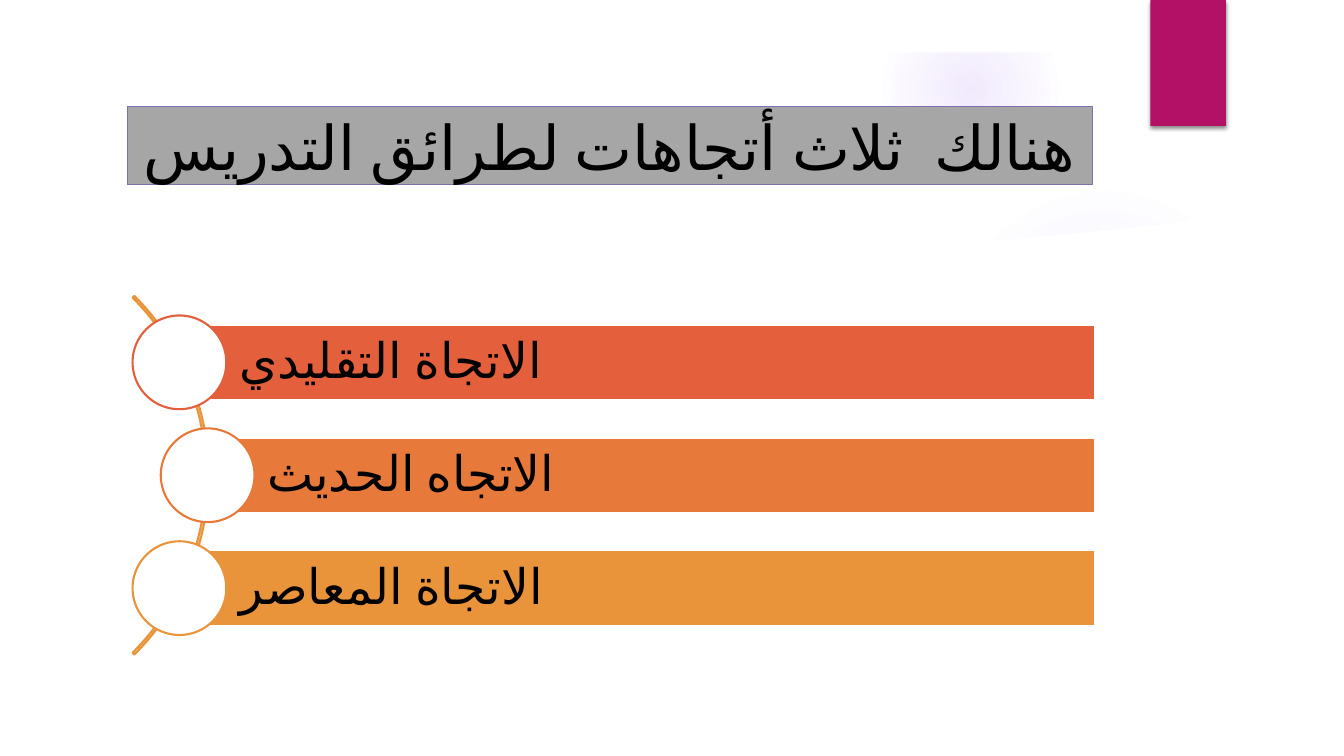
"""Build a slide on three trends in teaching methods."""
from lxml.etree import SubElement
from pptx import Presentation
from pptx.dml.color import RGBColor
from pptx.enum.lang import MSO_LANGUAGE_ID
from pptx.enum.shapes import MSO_SHAPE
from pptx.enum.text import MSO_ANCHOR, MSO_AUTO_SIZE, PP_ALIGN
from pptx.oxml import parse_xml
from pptx.oxml.ns import nsdecls, qn
from pptx.util import Inches, Pt

BLACK = RGBColor(0x00, 0x00, 0x00)
WHITE = RGBColor(0xFF, 0xFF, 0xFF)
GREY = RGBColor(0xA6, 0xA6, 0xA6)
PURPLE = RGBColor(0x80, 0x6E, 0xB1)
LILAC = RGBColor(0x9B, 0x6B, 0xF2)
PINK = RGBColor(0xB3, 0x11, 0x66)
RED = RGBColor(0xE4, 0x5F, 0x3C)
ORANGE = RGBColor(0xE7, 0x79, 0x3B)
AMBER = RGBColor(0xE9, 0x94, 0x3A)

WIDE, HIGH = 13.33, 7.5
GLOWS = [
    (9.41, 1.83, 3.08, [(0, 7), (36, 6), (69, 0)]),
    (8.75, 0.01, 1.75, [(0, 14), (36, 7), (73, 0)]),
]
VEIL = [(9.34, 2.5), (10.6, 2.43), (11.8, 2.3), (12.89, 2.14), (12.83, 1.66),
        (12.25, 1.85), (11.67, 2), (11.09, 2.14), (10.42, 2.27), (9.3, 2.43)]
SHEET = [(0.5, 2.04), (0.5, 7), (12.84, 7), (12.84, 2.04), (12, 2.17),
         (11.16, 2.27), (10.32, 2.35), (9.49, 2.41), (8.4, 2.46), (7.08, 2.48),
         (5.83, 2.46), (4.44, 2.41), (2.83, 2.3), (1.35, 2.15)]
EDGE = [(0, 0), (0, HIGH), (WIDE, HIGH), (WIDE, 0)]
HOLE = [(12.81, 6.98), (0.52, 6.98), (0.52, 0.52), (12.81, 0.52)]
TRENDS = [
    ("الاتجاة التقليدي", RED, 1.78),
    ("الاتجاه الحديث", ORANGE, 2.06),
    ("الاتجاة المعاصر", AMBER, 1.78),
]


def write(shape, text, size, align=PP_ALIGN.LEFT, left=0.1, side=0.1, lead=1.0):
    """Put one formatted paragraph in a shape."""
    frame = shape.text_frame
    frame.word_wrap = True
    frame.auto_size = MSO_AUTO_SIZE.NONE
    frame.vertical_anchor = MSO_ANCHOR.MIDDLE
    frame.margin_left = Inches(left)
    frame.margin_right = Inches(0.1)
    frame.margin_top = frame.margin_bottom = Inches(side)
    para = frame.paragraphs[0]
    para.alignment = align
    para.line_spacing = lead
    run = para.add_run()
    run.text = text
    run.font.size = Pt(size)
    run.font.name = Slide.FONT
    run.font.language_id = MSO_LANGUAGE_ID.ARABIC
    run.font.color.rgb = BLACK
    SubElement(run.font._element, qn("a:cs"), typeface=Slide.FONT)


class Slide:
    """Hold the style and the current slide."""

    FONT = "League Spartan"

    def __init__(self, deck):
        """Add a title-only slide to the deck."""
        self.page = deck.slides.add_slide(deck.slide_layouts[5])
        self.shapes = self.page.shapes

    def paint(self, shape, fill=None, line=None, width=1.5):
        """Set fill and line and drop the shadow."""
        shape.shadow.inherit = False
        if fill is None:
            shape.fill.background()
        else:
            shape.fill.solid()
            shape.fill.fore_color.rgb = fill
        if line is None:
            shape.line.fill.background()
        else:
            shape.line.color.rgb = line
            shape.line.width = Pt(width)
        return shape

    def shape(self, kind, left, top, width, height, **look):
        """Add a painted preset shape."""
        box = [Inches(n) for n in (left, top, width, height)]
        return self.paint(self.shapes.add_shape(kind, *box), **look)

    def glow(self, left, top, size, stops):
        """Add a disc that fades outward."""
        disc = self.shape(MSO_SHAPE.OVAL, left, top, size, size)
        marks = "".join(
            f'<a:gs pos="{pos * 1000}"><a:srgbClr val="{LILAC}">'
            f'<a:alpha val="{alpha * 1000}"/></a:srgbClr></a:gs>'
            for pos, alpha in stops)
        fade = parse_xml(
            f'<a:gradFill {nsdecls("a")}><a:gsLst>{marks}</a:gsLst>'
            '<a:path path="circle"><a:fillToRect l="50000" t="50000" '
            'r="50000" b="50000"/></a:path></a:gradFill>')
        props = disc._element.spPr
        props.replace(props.find(qn("a:noFill")), fade)

    def patch(self, *rings, alpha=100):
        """Add a white outline made of one or more rings."""
        first, *rest = [[(Inches(x), Inches(y)) for x, y in ring] for ring in rings]
        pen = self.shapes.build_freeform(*first[0])
        pen.add_line_segments(first[1:], close=True)
        for ring in rest:
            pen.move_to(*ring[0])
            pen.add_line_segments(ring[1:], close=True)
        form = self.paint(pen.convert_to_shape(), fill=WHITE)
        if alpha < 100:
            tint = form._element.spPr.find(qn("a:solidFill"))[0]
            SubElement(tint, qn("a:alpha"), val=str(alpha * 1000))

    def tab(self):
        """Add the top tab with its soft shadow."""
        tab = self.shape(MSO_SHAPE.RECTANGLE, 11.41, 0, 0.75, 1.25, fill=PINK)
        soft = tab._element.spPr.find(qn("a:effectLst"))
        cast = SubElement(soft, qn("a:outerShdw"), blurRad=str(Pt(3)),
                          dist=str(Pt(2)), dir="5400000", rotWithShape="0")
        tint = SubElement(cast, qn("a:srgbClr"), val=str(BLACK))
        SubElement(tint, qn("a:alpha"), val="45000")

    def title(self, text):
        """Place and format the title above the backdrop."""
        head = self.shapes.title
        self.shapes._spTree.append(head._element)
        head.left, head.top = Inches(1.26), Inches(1.06)
        head.width, head.height = Inches(9.58), Inches(0.77)
        head.fill.solid()
        head.fill.fore_color.rgb = GREY
        head.line.color.rgb = PURPLE
        head.line.width = Pt(0.75)
        write(head, text, 44, align=PP_ALIGN.CENTER, side=0.05)

    def arc(self):
        """Add the curve that links the discs."""
        arc = self.shape(MSO_SHAPE.BLOCK_ARC, -2.96, 2.2, 5.03, 5.03, line=AMBER)
        for i, turn in enumerate((189, 27, 0.005)):
            arc.adjustments[i] = turn

    def trend(self, text, color, left, top):
        """Add a labelled bar with a disc on its left end."""
        tall, disc = 0.75, 0.93
        bar = self.shape(MSO_SHAPE.RECTANGLE, left, top, 10.86 - left, tall,
                         fill=color, line=WHITE)
        write(bar, text, 35, left=0.59, lead=0.9)
        self.shape(MSO_SHAPE.OVAL, left - disc / 2, top + (tall - disc) / 2,
                   disc, disc, fill=WHITE, line=color)


def main():
    """Build and save the deck."""
    deck = Presentation()
    deck.slide_width, deck.slide_height = Inches(WIDE), Inches(HIGH)
    slide = Slide(deck)
    for glow in GLOWS:
        slide.glow(*glow)
    slide.patch(VEIL, alpha=20)
    slide.patch(SHEET)
    slide.patch(EDGE, HOLE)
    slide.tab()
    slide.title("هنالك  ثلاث أتجاهات لطرائق التدريس")
    slide.arc()
    for i, (text, color, left) in enumerate(TRENDS):
        slide.trend(text, color, left, 3.22 + 1.12 * i)
    deck.save("out.pptx")


if __name__ == "__main__":
    main()
